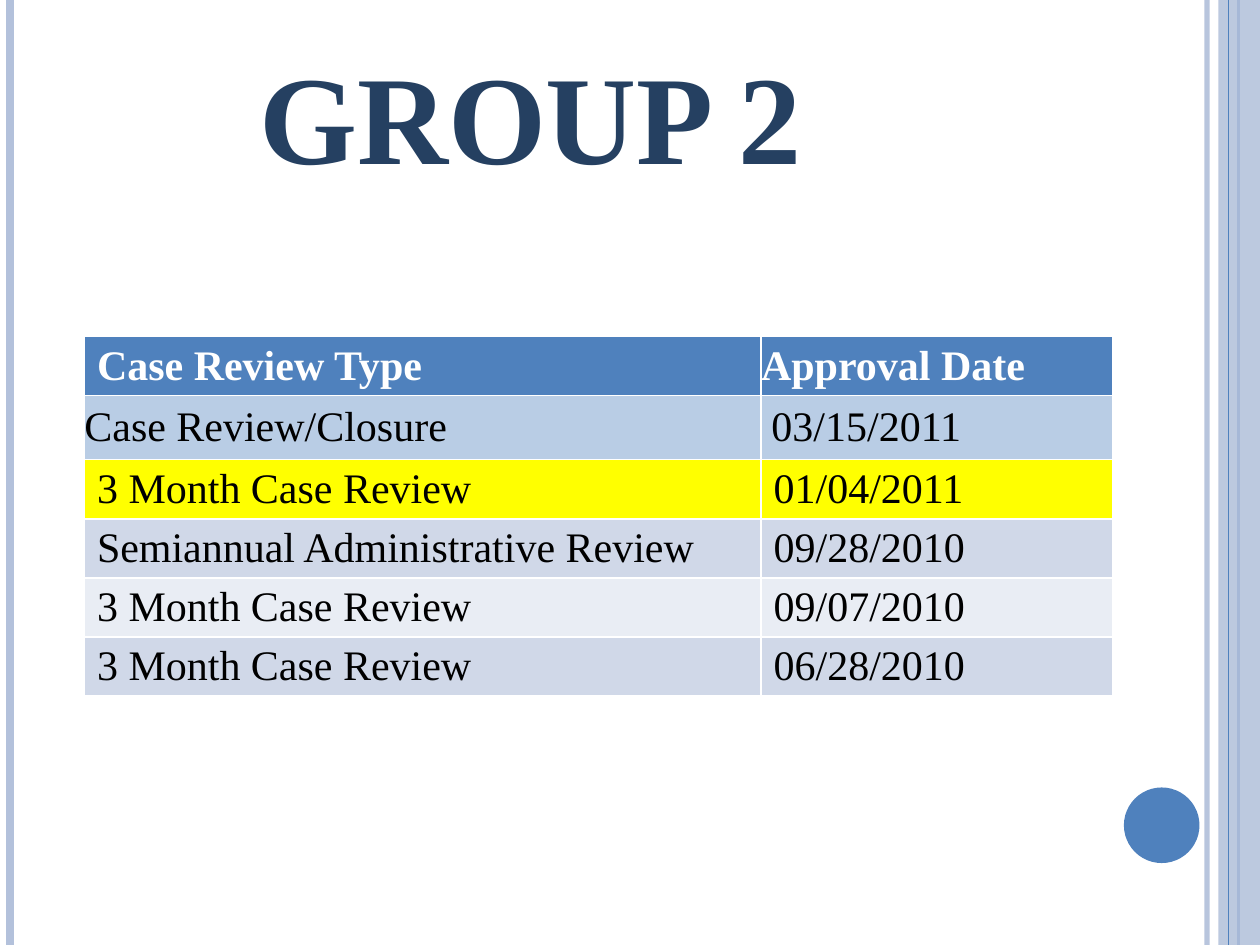
import pptx
import pptx.dml.color
import pptx.enum.shapes
import pptx.enum.text
import pptx.oxml.ns
import pptx.util
from lxml import etree

Inches = pptx.util.Inches
Pt = pptx.util.Pt
RGBColor = pptx.dml.color.RGBColor
qn = pptx.oxml.ns.qn

FONT = "Times New Roman"
WHITE = RGBColor(0xFF, 0xFF, 0xFF)
BLACK = RGBColor(0x00, 0x00, 0x00)
NAVY = RGBColor(0x25, 0x40, 0x61)
BLUE = RGBColor(0x4F, 0x81, 0xBD)
PALE_BLUE = RGBColor(0xB3, 0xC1, 0xDB)
LIGHT_BLUE = RGBColor(0xB9, 0xCD, 0xE5)
YELLOW = RGBColor(0xFF, 0xFF, 0x00)
BAND_DARK = RGBColor(0xD0, 0xD8, 0xE8)
BAND_LIGHT = RGBColor(0xE9, 0xED, 0xF4)


def set_opacity(shape, percent):
    """Apply an opacity to the solid colour of a shape's fill or a line."""
    color = shape._element.spPr.find(".//" + qn("a:srgbClr"))
    etree.SubElement(color, qn("a:alpha")).set("val", str(percent * 1000))


def add_rule(x, color, width):
    """Draw a vertical line over the full slide height."""
    rule = slide.shapes.add_connector(
        pptx.enum.shapes.MSO_CONNECTOR.STRAIGHT,
        Inches(x), 0, Inches(x), prs.slide_height)
    rule.line.color.rgb = color
    rule.line.width = Pt(width)
    etree.SubElement(rule._element.spPr, qn("a:effectLst"))
    return rule


prs = pptx.Presentation()
prs.slide_width = Inches(10)
prs.slide_height = Inches(7.5)
slide = prs.slides.add_slide(prs.slide_layouts[5])

# Side decoration
set_opacity(add_rule(9.58, PALE_BLUE, 3), 93)
add_rule(0.08, PALE_BLUE, 4.5)
add_rule(9.83, BLUE, 1.5)

side_band = slide.shapes.add_shape(
    pptx.enum.shapes.MSO_SHAPE.RECTANGLE,
    Inches(9.67), 0, Inches(0.33), prs.slide_height)
page_dot = slide.shapes.add_shape(
    pptx.enum.shapes.MSO_SHAPE.OVAL,
    Inches(8.92), Inches(6.25), Inches(0.6), Inches(0.6))
for decoration, color in ((side_band, PALE_BLUE), (page_dot, BLUE)):
    decoration.fill.solid()
    decoration.fill.fore_color.rgb = color
    decoration.line.fill.background()
    decoration.shadow.inherit = False
set_opacity(side_band, 87)
add_rule(9.75, BLUE, 0.75)

# Title
title = slide.shapes.title
title.left, title.top = Inches(0.92), Inches(0.25)
title.width, title.height = Inches(6.58), Inches(1.31)
title.text_frame.text = "GROUP 2"
title.text_frame.auto_size = pptx.enum.text.MSO_AUTO_SIZE.NONE
title.text_frame.vertical_anchor = pptx.enum.text.MSO_ANCHOR.BOTTOM
heading = title.text_frame.paragraphs[0]
heading.alignment = pptx.enum.text.PP_ALIGN.CENTER
heading_font = heading.runs[0].font
heading_font.name = FONT
heading_font.size = Pt(72)
heading_font.bold = True
heading_font.color.rgb = NAVY

# Case reviews: type, approval date, row colour
reviews = [
    ("Case Review Type", "Approval Date", BLUE),
    ("Case Review/Closure", " 03/15/2011", LIGHT_BLUE),
    ("3 Month Case Review", "01/04/2011", YELLOW),
    ("Semiannual Administrative Review", "09/28/2010", BAND_DARK),
    ("3 Month Case Review", "09/07/2010", BAND_LIGHT),
    ("3 Month Case Review", "06/28/2010", BAND_DARK),
]
flush_cells = {(0, 1), (1, 0), (1, 1)}  # cells without inner margins

review_table = slide.shapes.add_table(
    len(reviews), 2, Inches(0.67), Inches(2.67), Inches(8.16), Inches(2.54)).table
review_table.columns[0].width = Inches(5.37)
review_table.columns[1].width = Inches(2.79)

for row, (review_type, approval_date, color) in enumerate(reviews):
    review_table.rows[row].height = Inches(0.51 if row == 1 else 0.41)
    for column, text in enumerate((review_type, approval_date)):
        cell = review_table.cell(row, column)
        cell.fill.solid()
        cell.fill.fore_color.rgb = color
        if (row, column) in flush_cells:
            cell.margin_left = cell.margin_right = 0
            cell.margin_top = cell.margin_bottom = 0
            cell.vertical_anchor = pptx.enum.text.MSO_ANCHOR.MIDDLE
        cell.text_frame.text = text
        font = cell.text_frame.paragraphs[0].runs[0].font
        font.name = FONT
        font.size = Pt(24)
        font.bold = row == 0
        font.color.rgb = WHITE if row == 0 else BLACK

prs.save("out.pptx")
